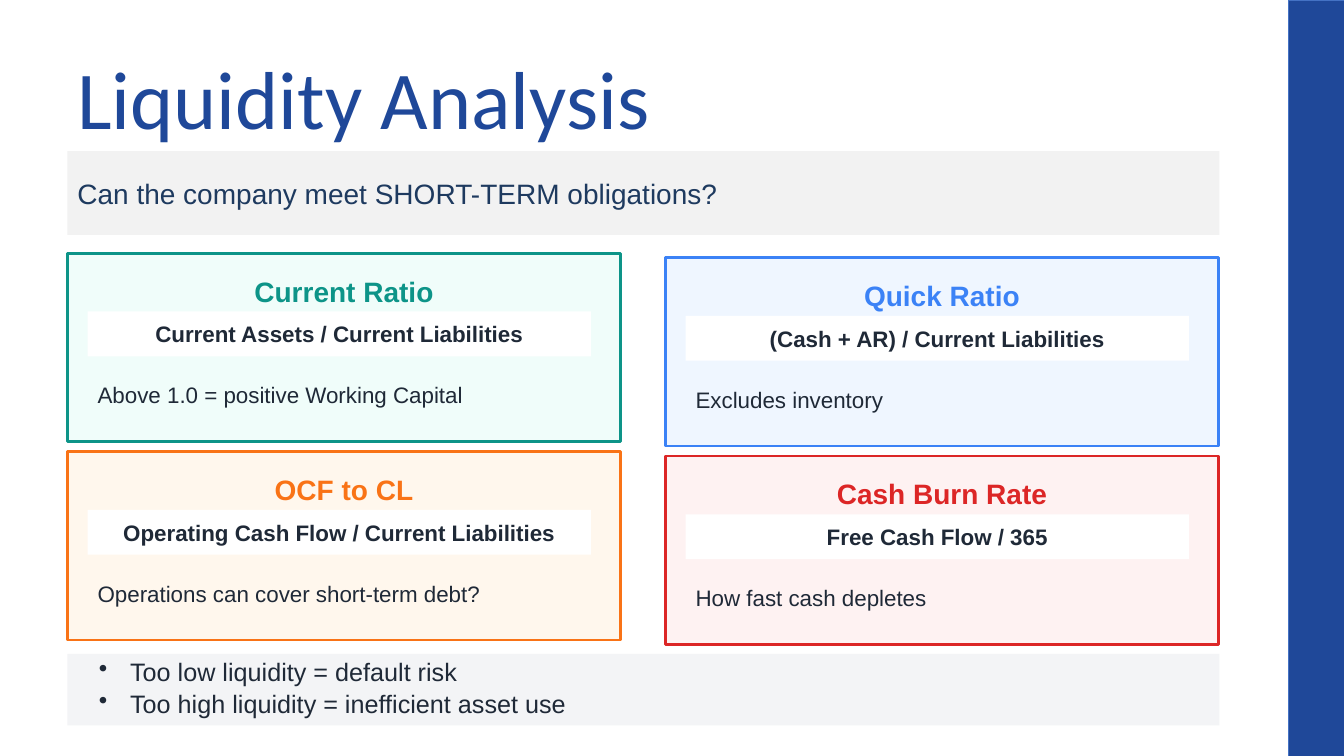
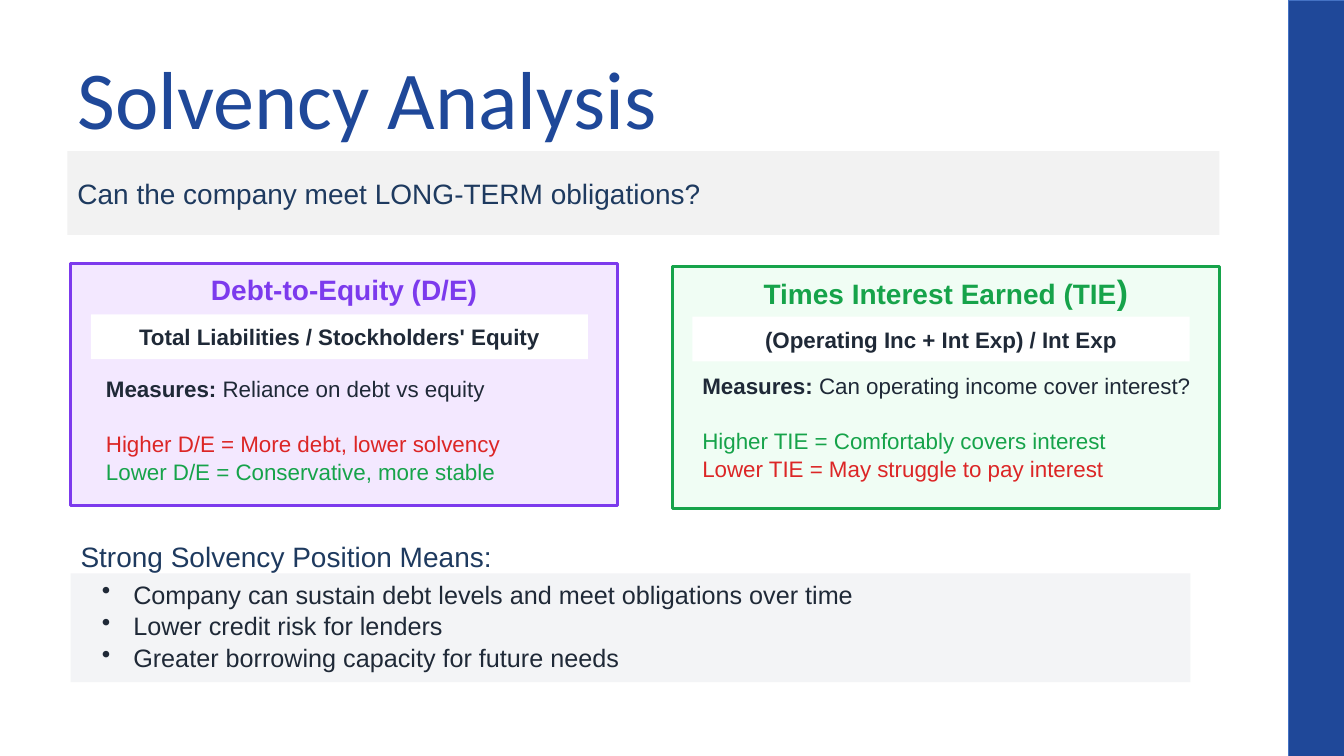
from lxml import etree
from pptx import Presentation
from pptx import util as u
from pptx.dml.color import RGBColor
from pptx.enum import shapes, text
from pptx.oxml import ns

Cm, Pt = u.Cm, u.Pt
CENTER, MIDDLE = text.PP_ALIGN.CENTER, text.MSO_ANCHOR.MIDDLE
TOP = text.MSO_ANCHOR.TOP

COLORS = {
    "brand": "1F4899", "brand_line": "4472C4", "navy": "1E3A5F", "ink": "1F2937",
    "white": "FFFFFF", "question": "F2F2F2", "panel": "F3F4F6",
    "teal": "0D9488", "teal_pale": "F0FDFA", "blue": "3B82F6", "blue_pale": "EFF6FF",
    "orange": "F97316", "orange_pale": "FFF7ED", "red": "DC2626", "red_pale": "FEF2F2",
    "violet": "7C3AED", "violet_pale": "F3E8FF", "green": "16A34A", "green_pale": "F0FDF4",
}
PAGE_W, PAGE_H = 33.87, 19.05
LEFT, CONTENT_W = 1.7, 29.03
BAND_W = 1.41


def color(name):
    return RGBColor.from_string(COLORS[name])


def add_rect(page, x, y, w, h, fill, line=None, line_width=2):
    box = page.shapes.add_shape(
        shapes.MSO_SHAPE.RECTANGLE, Cm(x), Cm(y), Cm(w), Cm(h))
    box.shadow.inherit = False
    box.fill.solid()
    box.fill.fore_color.rgb = color(fill)
    if line:
        box.line.color.rgb = color(line)
        box.line.width = Pt(line_width)
    else:
        box.line.fill.background()
    return box


def add_box(page, x, y, w, h):
    return page.shapes.add_textbox(Cm(x), Cm(y), Cm(w), Cm(h))


def write(box, content, size=16, ink="ink", bold=False, font="Arial", align=text.PP_ALIGN.LEFT,
          anchor=MIDDLE, spacing=None, before=0, bullet=False):
    """Add one paragraph; content is a string or a list of (string, overrides)."""
    frame = box.text_frame
    frame.word_wrap = True
    frame.vertical_anchor = anchor
    first = not frame.paragraphs[0].runs
    para = frame.paragraphs[0] if first else frame.add_paragraph()
    para.alignment = align
    if spacing:
        para.line_spacing = spacing
    if before:
        para.space_before = Pt(before)
    if bullet:
        properties = para._p.get_or_add_pPr()
        indent = Cm(0.79)
        properties.set("marL", str(indent))
        properties.set("indent", str(-indent))
        etree.SubElement(properties, ns.qn("a:buChar")).set("char", "•")
    spans = [(content, {})] if isinstance(content, str) else content
    for words, override in spans:
        span = para.add_run()
        span.text = words
        span.font.name = font
        span.font.size = Pt(override.get("size", size))
        span.font.bold = override.get("bold", bold)
        span.font.color.rgb = color(ink)


def add_page(deck, title, question):
    """Blank page with the side band, the title and the question bar."""
    page = deck.slides.add_slide(deck.slide_layouts[6])
    add_rect(page, PAGE_W - BAND_W, 0, BAND_W, PAGE_H, "brand", "brand_line", 0.5)
    write(add_box(page, LEFT, 0.84, 30.48, 3.18), title,
          size=58.7, ink="brand", font="Calibri")
    write(add_rect(page, LEFT, 3.81, CONTENT_W, 2.11, "question"), question,
          size=20, ink="navy")
    return page


def add_card(page, x, y, w, h, hue, title, formula, title_y, formula_y):
    """Framed card with a heading and a formula on a white strip."""
    add_rect(page, x, y, w, h, hue + "_pale", hue)
    write(add_box(page, x, y + title_y, w, 1), title,
          size=20, ink=hue, bold=True, align=CENTER)
    strip = add_rect(page, x + 0.51, y + formula_y, w - 1.26, 1.13, "white")
    write(strip, formula, bold=True, align=CENTER)


def add_bullets(page, x, y, w, h, items):
    panel = add_rect(page, x, y, w, h, "panel")
    panel.text_frame.margin_left = Cm(0.79)
    panel.text_frame.margin_bottom = Cm(0.27)
    for item in items:
        write(panel, item, size=18, spacing=1.05, bullet=True)


def liquidity_page(deck):
    page = add_page(deck, "Liquidity Analysis", "Can the company meet SHORT-TERM obligations?")
    card_w, card_h = 13.94, 4.75
    column_step, row_step, right_drop = 15.07, 5, 0.11
    cards = [
        ("teal", "Current Ratio", "Current Assets / Current Liabilities",
         "Above 1.0 = positive Working Capital"),
        ("blue", "Quick Ratio", "(Cash + AR) / Current Liabilities", "Excludes inventory"),
        ("orange", "OCF to CL", "Operating Cash Flow / Current Liabilities",
         "Operations can cover short-term debt?"),
        ("red", "Cash Burn Rate", "Free Cash Flow / 365", "How fast cash depletes"),
    ]
    for index, (hue, title, formula, note) in enumerate(cards):
        row, column = divmod(index, 2)
        x = LEFT + column * column_step
        y = 6.38 + row * row_step + column * right_drop
        add_card(page, x, y, card_w, card_h, hue, title, formula, 0.45, 1.47)
        write(add_box(page, x + 0.51, y + 2.67, card_w - 1.27, 1.8), note)
    add_bullets(page, LEFT, 16.48, CONTENT_W, 1.8, [
        "Too low liquidity = default risk",
        "Too high liquidity = inefficient asset use",
    ])


def solvency_page(deck):
    page = add_page(deck, "Solvency Analysis", "Can the company meet LONG-TERM obligations?")
    card_w, card_h = 13.79, 6.1
    # Each card: position, colour, heading, formula, note offset, measure, verdicts
    cards = [
        (1.78, 6.65, "violet", "Debt-to-Equity (D/E)",
         "Total Liabilities / Stockholders' Equity", (0.64, 2.64),
         "Reliance on debt vs equity",
         [("Higher D/E = More debt, lower solvency", "red"),
          ("Lower D/E = Conservative, more stable", "green")]),
        (16.94, 6.71, "green", [("Times Interest Earned (TIE", {}), (")", {"size": 24})],
         "(Operating Inc + Int Exp) / Int Exp", (0.51, 2.51),
         "Can operating income cover interest?",
         [("Higher TIE = Comfortably covers interest", "green"),
          ("Lower TIE = May struggle to pay interest", "red")]),
    ]
    for x, y, hue, title, formula, (note_x, note_y), measure, verdicts in cards:
        add_card(page, x, y, card_w, card_h, hue, title, formula, 0.13, 1.27)
        note = add_box(page, x + note_x, y + note_y, 13.05, 3.2)
        write(note, [("Measures: ", {"bold": True}), (measure, {})],
              anchor=TOP, spacing=1.05)
        for index, (verdict, ink) in enumerate(verdicts):
            write(note, verdict, ink=ink, anchor=TOP, spacing=1.05,
                  before=0 if index else 19.3)

    # Conclusion
    write(add_box(page, 1.78, 13.56, 28.22, 0.9), "Strong Solvency Position Means:",
          size=20, ink="navy")
    add_bullets(page, 1.78, 14.45, 28.22, 2.74, [
        "Company can sustain debt levels and meet obligations over time",
        "Lower credit risk for lenders",
        "Greater borrowing capacity for future needs",
    ])


def main():
    deck = Presentation()
    deck.slide_width, deck.slide_height = Cm(PAGE_W), Cm(PAGE_H)
    liquidity_page(deck)
    solvency_page(deck)
    deck.save("out.pptx")


if __name__ == "__main__":
    main()
